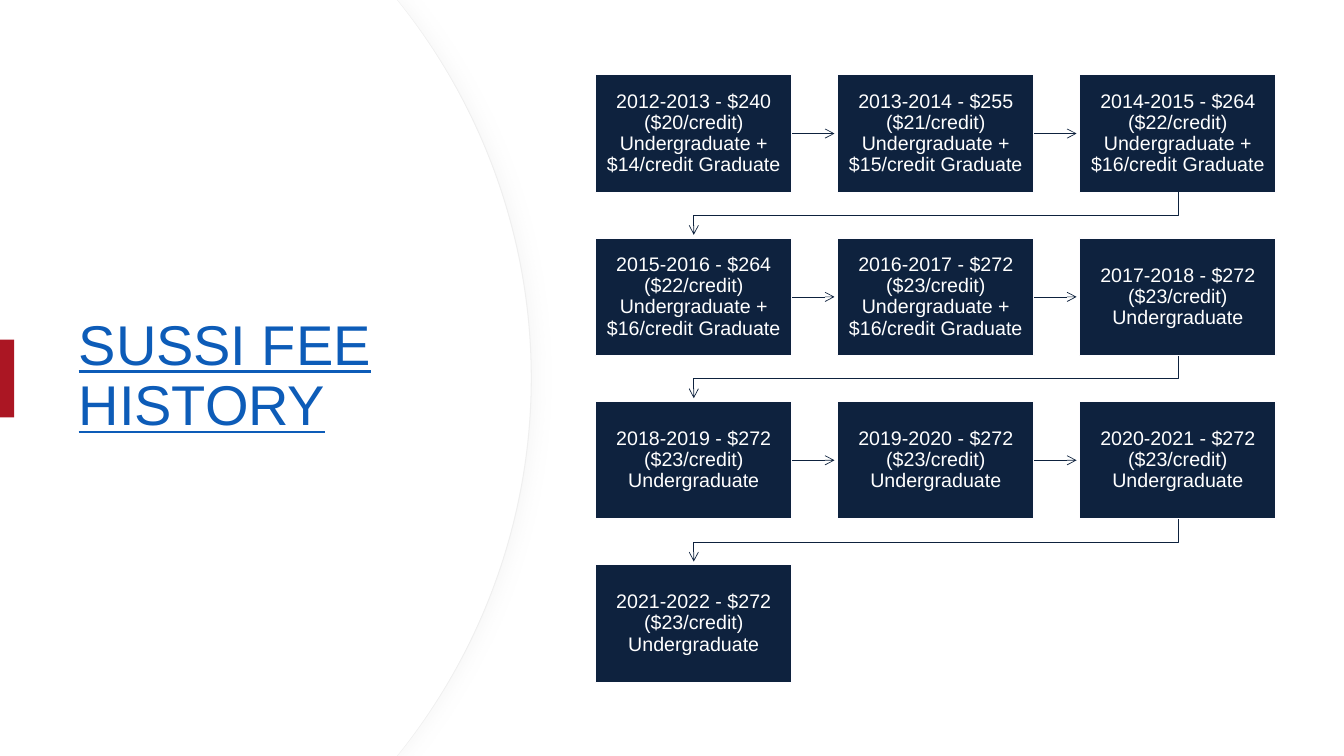
from math import asin, cos, sin, tan

from lxml import etree
from pptx import Presentation
from pptx.dml.color import RGBColor
from pptx.enum.shapes import MSO_CONNECTOR, MSO_SHAPE
from pptx.enum.text import MSO_ANCHOR, MSO_AUTO_SIZE, PP_ALIGN
from pptx.oxml import parse_xml
from pptx.oxml.ns import nsdecls, qn
from pptx.util import Cm, Pt

RECTANGLE = MSO_SHAPE.RECTANGLE
STRAIGHT = MSO_CONNECTOR.STRAIGHT
MIDDLE = MSO_ANCHOR.MIDDLE
NO_AUTOFIT = MSO_AUTO_SIZE.NONE
LEFT, CENTER = PP_ALIGN.LEFT, PP_ALIGN.CENTER

FONT = "Arial"
WHITE, NAVY, RED, BLUE = "FFFFFF", "0E223E", "AB1623", "0D5CB8"
PANEL_LINE, BOX_LINE = "EFEFEF", "FEFDFF"
SLIDE_W, SLIDE_H = 33.87, 19.05
COLUMNS = 3
BOX_W, BOX_H = 4.95, 2.97
TIP_GAP = 0.08
FEES = [
    "2012-2013 - $240 ($20/credit) Undergraduate + $14/credit Graduate",
    "2013-2014 - $255 ($21/credit) Undergraduate + $15/credit Graduate",
    "2014-2015 - $264 ($22/credit) Undergraduate + $16/credit Graduate",
    "2015-2016 - $264 ($22/credit) Undergraduate + $16/credit Graduate",
    "2016-2017 - $272 ($23/credit) Undergraduate + $16/credit Graduate",
    "2017-2018 - $272 ($23/credit) Undergraduate",
    "2018-2019 - $272 ($23/credit) Undergraduate",
    "2019-2020 - $272 ($23/credit) Undergraduate",
    "2020-2021 - $272 ($23/credit) Undergraduate",
    "2021-2022 - $272 ($23/credit) Undergraduate",
]


def rgb(value):
    """Turn a hex string into a colour."""
    return RGBColor.from_string(value)


def paint(sp, fill, line=None, width=0.75):
    """Give a shape a flat fill and an optional outline."""
    sp.shadow.inherit = False
    sp.fill.solid()
    sp.fill.fore_color.rgb = rgb(fill)
    if line:
        sp.line.color.rgb = rgb(line)
        sp.line.width = Pt(width)
    else:
        sp.line.fill.background()


def write(sp, text, size, color, align):
    """Put one paragraph into a shape and format it."""
    tf = sp.text_frame
    tf.text = text
    tf.word_wrap = True
    tf.auto_size = NO_AUTOFIT
    tf.vertical_anchor = MIDDLE
    p = tf.paragraphs[0]
    p.alignment = align
    p.line_spacing = 0.9
    font = p.runs[0].font
    font.name, font.size, font.color.rgb = FONT, Pt(size), rgb(color)
    return p


def style_arrow(sp):
    """Draw a thin navy line with an open arrowhead at its end."""
    sp.line.color.rgb = rgb(NAVY)
    sp.line.width = Pt(0.5)
    etree.SubElement(sp.line._ln, qn("a:tailEnd"), type="arrow")


def bend(sp, first, count):
    """Turn each three line segments from the first into one Bezier curve."""
    lines = list(sp._element.iter(qn("a:lnTo")))
    for i in range(first, first + 3 * count, 3):
        curve = etree.Element(qn("a:cubicBezTo"))
        lines[i].addprevious(curve)
        for line in lines[i:i + 3]:
            curve.append(line[0])
            line.getparent().remove(line)


def add_panel(slide, width, height, chord, line=None):
    """Add a white panel whose right side is a circular arc."""
    half, bulge = height / 2, width - chord
    radius = (half ** 2 + bulge ** 2) / (2 * bulge)
    reach = asin(half / radius)
    handle = radius * 4 / 3 * tan(reach / 4)
    dx, dy = handle * sin(reach), handle * cos(reach)
    upper = [(chord, 0), (chord + dx, dy), (width, half - handle)]
    lower = [(x, height - y) for x, y in reversed(upper)]
    points = upper + [(width, half)] + lower + [(0, height)]
    builder = slide.shapes.build_freeform(0, 0)
    builder.add_line_segments([(Cm(x), Cm(y)) for x, y in points])
    sp = builder.convert_to_shape()
    bend(sp, 1, 2)
    paint(sp, WHITE, line)
    return sp


def add_panel_shadow(sp):
    """Cast a soft grey shadow to the right of a panel."""
    effects = sp._element.spPr.find(qn("a:effectLst"))
    effects.append(parse_xml(
        f'<a:outerShdw {nsdecls("a")} blurRad="{Pt(12)}" dist="{Pt(3)}" dir="0">'
        '<a:srgbClr val="D9D9D9"><a:alpha val="20000"/></a:srgbClr>'
        '</a:outerShdw>'))


def add_title_region(slide, left, top, width, height):
    """Build the curved panel, the title and its red marker in the box."""
    panel = add_panel(slide, left + width, height, 10, PANEL_LINE)
    add_panel_shadow(panel)
    add_panel(slide, left + width - 0.03, height, 10)

    title = slide.shapes.title
    slide.shapes._spTree.append(title._element)
    title.left, title.top = Cm(left + 1.73), Cm(top + 3.23)
    title.width, title.height = Cm(10), Cm(12.57)
    p = write(title, "SUSSI FEE HISTORY", 40, BLUE, LEFT)
    p.space_after = Pt(6)
    p.runs[0].font.underline = True

    marker = slide.shapes.add_shape(
        RECTANGLE, Cm(left), Cm(top + 8.56), Cm(0.36), Cm(1.96))
    paint(marker, RED)


def add_fee_box(slide, left, top, text):
    """Add one navy box with the fee of a year."""
    sp = slide.shapes.add_shape(
        RECTANGLE, Cm(left), Cm(top), Cm(BOX_W), Cm(BOX_H))
    paint(sp, NAVY, BOX_LINE, 1)
    tf = sp.text_frame
    tf.margin_left = tf.margin_right = Cm(0.25)
    tf.margin_top = tf.margin_bottom = Cm(0.25)
    write(sp, text, 14, WHITE, CENTER)
    return sp


def add_side_arrow(slide, start, end):
    """Lead from a box to just before its right neighbour."""
    y = start.top + start.height // 2
    arrow = slide.shapes.add_connector(
        STRAIGHT, start.left + start.width, y, end.left - Cm(TIP_GAP), y)
    arrow.begin_connect(start, 3)
    style_arrow(arrow)
    etree.SubElement(arrow._element.spPr, qn("a:effectLst"))


def add_return_arrow(slide, start, end):
    """Lead from the last box of a row to the first box of the next."""
    x1, x2 = start.left + start.width // 2, end.left + end.width // 2
    y1, y2 = start.top + start.height, end.top
    turn = (y1 + y2) // 2
    builder = slide.shapes.build_freeform(x1, y1)
    builder.add_line_segments(
        [(x1, turn), (x2, turn), (x2, y2 - Cm(TIP_GAP))], close=False)
    sp = builder.convert_to_shape()
    sp.shadow.inherit = False
    sp.fill.background()
    style_arrow(sp)


def add_fee_flow(slide, left, top, width, height):
    """Lay the yearly fees out row by row in the box and link them."""
    rows = -(-len(FEES) // COLUMNS)
    step_x = (width - BOX_W) / (COLUMNS - 1)
    step_y = (height - BOX_H) / (rows - 1)
    boxes = [add_fee_box(slide, left + i % COLUMNS * step_x,
                         top + i // COLUMNS * step_y, text)
             for i, text in enumerate(FEES)]
    for i, (start, end) in enumerate(zip(boxes, boxes[1:]), 1):
        link = add_side_arrow if i % COLUMNS else add_return_arrow
        link(slide, start, end)


def main():
    """Build the fee history slide."""
    prs = Presentation()
    prs.slide_width, prs.slide_height = Cm(SLIDE_W), Cm(SLIDE_H)
    slide = prs.slides.add_slide(prs.slide_layouts[5])
    add_title_region(slide, 0, 0, 13.39, SLIDE_H)
    add_fee_flow(slide, 15.01, 1.88, 17.15, 15.32)
    prs.save("out.pptx")


if __name__ == "__main__":
    main()
